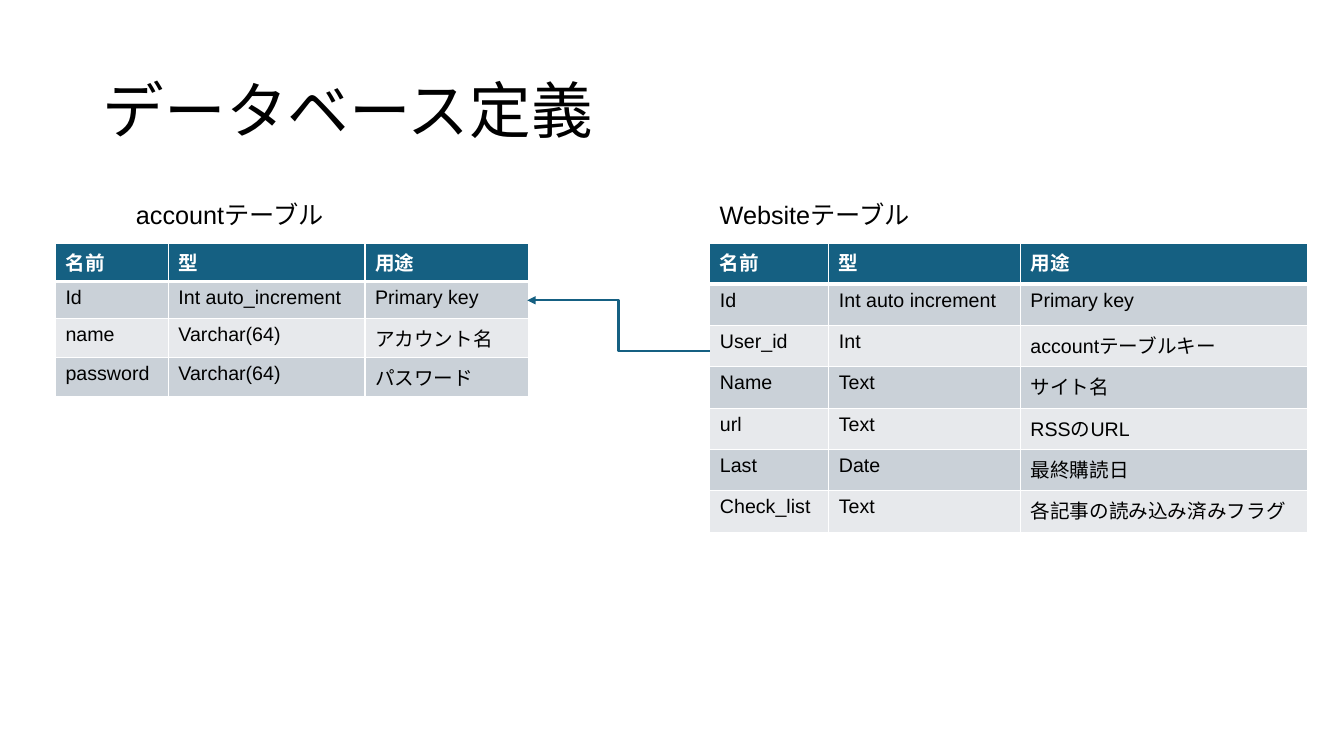
from lxml import etree
from pptx import Presentation
from pptx.dml.color import RGBColor
from pptx.enum.shapes import MSO_CONNECTOR
from pptx.enum.text import MSO_ANCHOR, MSO_AUTO_SIZE, PP_ALIGN
from pptx.oxml.ns import qn
from pptx.util import Inches, Pt

ELBOW = MSO_CONNECTOR.ELBOW
MIDDLE = MSO_ANCHOR.MIDDLE
LEFT = PP_ALIGN.LEFT
NO_FIT = MSO_AUTO_SIZE.NONE
GROW = MSO_AUTO_SIZE.SHAPE_TO_FIT_TEXT

FONT = "Arial"
BLACK, WHITE, BLUE = "000000", "FFFFFF", "156082"
BANDS = ("CAD1D8", "E7E9EC")
TOP = 2.41

HEAD = ("名前", "型", "用途")
ACCOUNT = (
    HEAD,
    ("Id", "Int auto_increment", "Primary key"),
    ("name", "Varchar(64)", "アカウント名"),
    ("password", "Varchar(64)", "パスワード"),
)
WEBSITE = (
    HEAD,
    ("Id", "Int auto increment", "Primary key"),
    ("User_id", "Int", "accountテーブルキー"),
    ("Name", "Text", "サイト名"),
    ("url", "Text", "RSSのURL"),
    ("Last", "Date", "最終購読日"),
    ("Check_list", "Text", "各記事の読み込み済みフラグ"),
)


def paint(target, color):
    target.solid()
    target.fore_color.rgb = RGBColor.from_string(color)


def write(frame, text, size, color=BLACK, bold=False):
    para = frame.paragraphs[0]
    para.alignment = LEFT
    run = para.add_run()
    run.text = text
    run.font.name = FONT
    run.font.size = Pt(size)
    run.font.bold = bold
    paint(run.font.fill, color)
    return para


def add_title(slide, text):
    title = slide.shapes.title
    title.left, title.top = Inches(0.92), Inches(0.4)
    title.width, title.height = Inches(11.5), Inches(1.45)
    frame = title.text_frame
    frame.auto_size = NO_FIT
    frame.vertical_anchor = MIDDLE
    write(frame, text, 44).line_spacing = 0.9


def add_label(slide, text, left, width):
    box = slide.shapes.add_textbox(
        Inches(left), Inches(1.93), Inches(width), Inches(0.4))
    frame = box.text_frame
    frame.word_wrap = True
    frame.auto_size = GROW
    write(frame, text, 18)


def add_edge(cell, side, width):
    props = cell._tc.get_or_add_tcPr()
    line = etree.SubElement(props, qn("a:" + side), w=str(Pt(width)))
    fill = etree.SubElement(line, qn("a:solidFill"))
    etree.SubElement(fill, qn("a:srgbClr"), val=WHITE)


def style_cell(cell, text, row):
    widths = {"lnL": 1, "lnR": 1,
              "lnT": 3 if row == 1 else 1, "lnB": 3 if row == 0 else 1}
    for side, width in widths.items():
        add_edge(cell, side, width)
    head = row == 0
    paint(cell.fill, BLUE if head else BANDS[(row - 1) % 2])
    write(cell.text_frame, text, 14, WHITE if head else BLACK, head)


def add_grid(slide, data, left, widths, height):
    table = slide.shapes.add_table(
        len(data), len(widths), Inches(left), Inches(TOP),
        Inches(sum(widths)), Inches(height * len(data))).table
    for column, width in zip(table.columns, widths):
        column.width = Inches(width)
    for r, values in enumerate(data):
        table.rows[r].height = Inches(height)
        for c, text in enumerate(values):
            style_cell(table.cell(r, c), text, r)


def add_link(slide, start, end):
    link = slide.shapes.add_connector(
        ELBOW, *(Inches(value) for value in start + end))
    paint(link.line.fill, BLUE)
    link.line.width = Pt(1.5)
    etree.SubElement(link.line._get_or_add_ln(), qn("a:tailEnd"), type="triangle")
    etree.SubElement(link._element.spPr, qn("a:effectLst"))


def main():
    deck = Presentation()
    deck.slide_width, deck.slide_height = Inches(13.33), Inches(7.5)
    slide = deck.slides.add_slide(deck.slide_layouts[5])
    add_title(slide, "データベース定義")
    add_grid(slide, ACCOUNT, 0.55, (1.12, 1.95, 1.62), 0.37)
    add_grid(slide, WEBSITE, 7.04, (1.18, 1.9, 2.85), 0.41)
    add_label(slide, "accountテーブル", 1.25, 2.14)
    add_label(slide, "Websiteテーブル", 7.04, 2.16)
    add_link(slide, (7.04, 3.48), (5.23, 2.98))
    deck.save("out.pptx")


if __name__ == "__main__":
    main()
